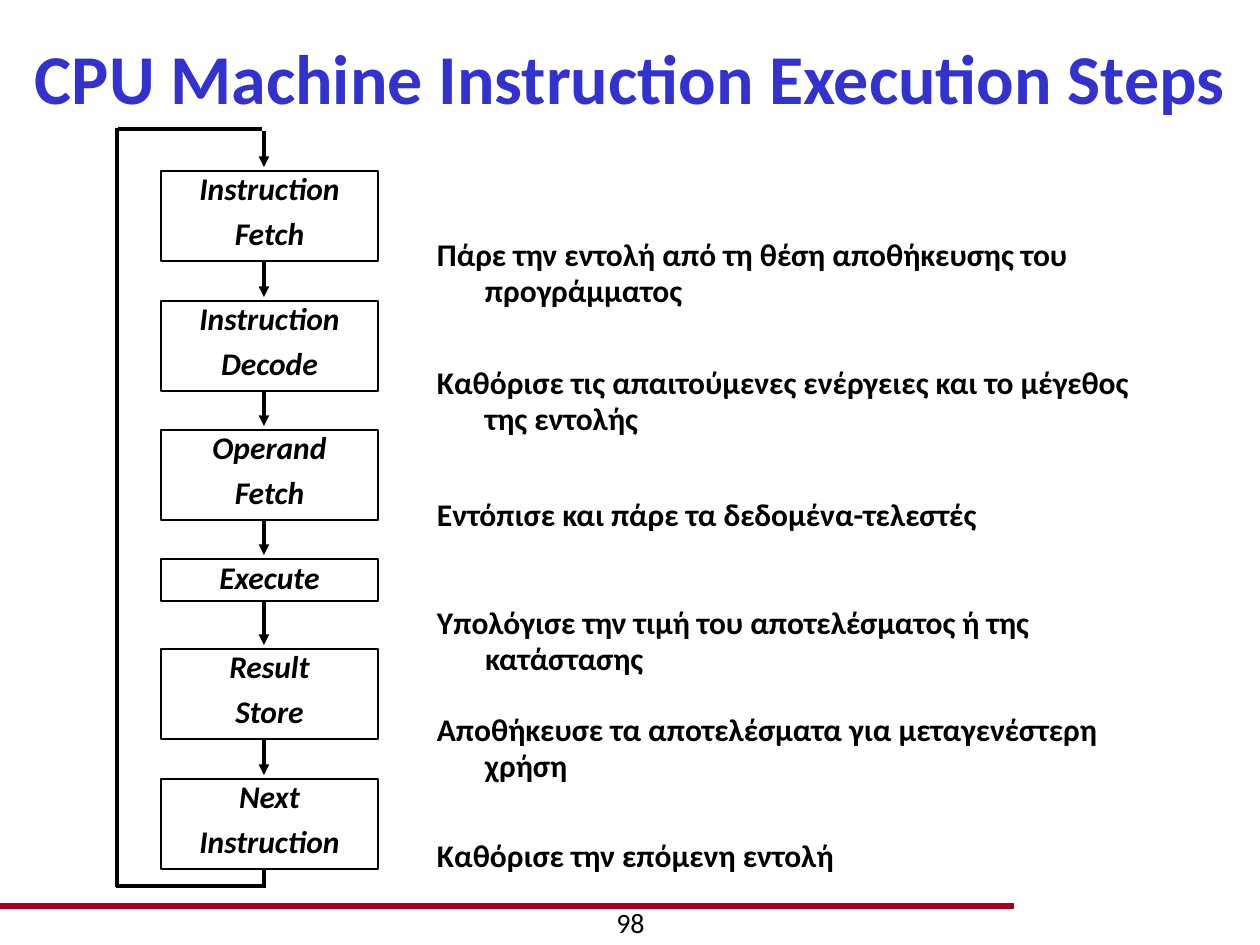
import pptx
import pptx.dml.color
import pptx.enum.shapes
import pptx.enum.text
import pptx.oxml.ns
import pptx.util
from dataclasses import dataclass
from lxml import etree

PX = 914400 / 126  # EMU per px


@dataclass
class Theme:
    font: str = "Calibri"
    black: str = "000000"
    title: str = "3333CC"
    rule: str = "A50021"
    title_size: int = 40
    body_size: int = 18
    number_size: int = 16


theme = Theme()
ALIGN = pptx.enum.text.PP_ALIGN
ANCHOR = pptx.enum.text.MSO_ANCHOR

presentation = pptx.Presentation()
presentation.slide_width = round(1260 * PX)
presentation.slide_height = round(945 * PX)
slide = presentation.slides.add_slide(presentation.slide_layouts[6])


def write_text(shape, text, size=theme.body_size, color=theme.black, bold=True,
               italic=False, align=ALIGN.LEFT, anchor=ANCHOR.TOP, inset=(9, 4),
               hanging=0, line_spacing=None, space_before=0):
    frame = shape.text_frame
    frame.word_wrap = True
    frame.vertical_anchor = anchor
    frame.margin_left = frame.margin_right = round(inset[0] * PX)
    frame.margin_top = frame.margin_bottom = round(inset[1] * PX)
    frame.text = text
    for index, paragraph in enumerate(frame.paragraphs):
        paragraph.alignment = align
        paragraph.line_spacing = line_spacing
        if index:
            paragraph.space_before = pptx.util.Pt(space_before)
        if hanging:
            properties = paragraph._p.get_or_add_pPr()
            properties.set("marL", str(round(hanging * PX)))
            properties.set("indent", str(round(-hanging * PX)))
        paragraph.font.name = theme.font
        paragraph.font.size = pptx.util.Pt(size)
        paragraph.font.bold = bold
        paragraph.font.italic = italic
        paragraph.font.color.rgb = pptx.dml.color.RGBColor.from_string(color)


def draw_line(start, end, width=2, color=theme.black, arrow=False):
    connector = slide.shapes.add_connector(
        pptx.enum.shapes.MSO_CONNECTOR.STRAIGHT,
        *(round(value * PX) for value in (*start, *end)))
    connector.line.width = pptx.util.Pt(width)
    connector.line.color.rgb = pptx.dml.color.RGBColor.from_string(color)
    if arrow:
        tail = etree.SubElement(connector.line._get_or_add_ln(),
                                pptx.oxml.ns.qn("a:tailEnd"))
        tail.set("type", "triangle")
    etree.SubElement(connector._element.spPr, pptx.oxml.ns.qn("a:effectLst"))


# Footer rule
draw_line((0, 906), (1014, 906), width=3, color=theme.rule)

# Title and page number
title = slide.shapes.add_textbox(0, round(26 * PX), round(1260 * PX), round(102 * PX))
write_text(title, "CPU Machine Instruction Execution Steps", size=theme.title_size,
           color=theme.title, align=ALIGN.CENTER, anchor=ANCHOR.MIDDLE, inset=(13, 6))
number = slide.shapes.add_textbox(*(round(value * PX) for value in (431, 900, 399, 50)))
write_text(number, "98", size=theme.number_size, bold=False, align=ALIGN.CENTER,
           inset=(13, 6))

# Step boxes: top, height, label
steps = [
    (171, 90, "Instruction\nFetch"),
    (301, 90, "Instruction\nDecode"),
    (430, 90, "Operand\nFetch"),
    (559, 42, "Execute"),
    (649, 90, "Result\nStore"),
    (779, 90, "Next\nInstruction"),
]
for top, height, label in steps:
    box = slide.shapes.add_shape(
        pptx.enum.shapes.MSO_SHAPE.RECTANGLE,
        *(round(value * PX) for value in (161, top, 217, height)))
    box.shadow.inherit = False
    box.fill.background()
    box.line.width = pptx.util.Pt(1)
    box.line.color.rgb = pptx.dml.color.RGBColor.from_string(theme.black)
    write_text(box, label, italic=True, align=ALIGN.CENTER, hanging=48,
               line_spacing=0.86, space_before=7)

# Arrows between consecutive steps
for (top, height, label), (next_top, *rest) in zip(steps, steps[1:]):
    draw_line((264, top + height), (264, next_top - 4), arrow=True)

# Loop back to the first step
draw_line((264, 868), (264, 885))
draw_line((266, 886), (116, 886))
draw_line((117, 887), (117, 128))
draw_line((118, 129), (262, 129))
draw_line((264, 131), (264, 167), arrow=True)

# Descriptions: top, width, height, alignment, text
descriptions = [
    (233, 766, 81, ALIGN.LEFT, "Πάρε την εντολή από τη θέση αποθήκευσης του προγράμματος"),
    (361, 756, 81, ALIGN.LEFT,
     "Καθόρισε τις απαιτούμενες ενέργειες και το μέγεθος της εντολής"),
    (493, 735, 44, ALIGN.JUSTIFY, "Εντόπισε και πάρε τα δεδομένα-τελεστές"),
    (601, 735, 81, ALIGN.LEFT, "Υπολόγισε την τιμή του αποτελέσματος ή της κατάστασης"),
    (708, 757, 81, ALIGN.LEFT, "Αποθήκευσε τα αποτελέσματα για μεταγενέστερη χρήση"),
    (834, 714, 44, ALIGN.JUSTIFY, "Καθόρισε την επόμενη εντολή"),
]
for top, width, height, align, text in descriptions:
    description = slide.shapes.add_textbox(
        *(round(value * PX) for value in (428, top, width, height)))
    write_text(description, text, align=align, hanging=48, line_spacing=0.97)

presentation.save("out.pptx")
